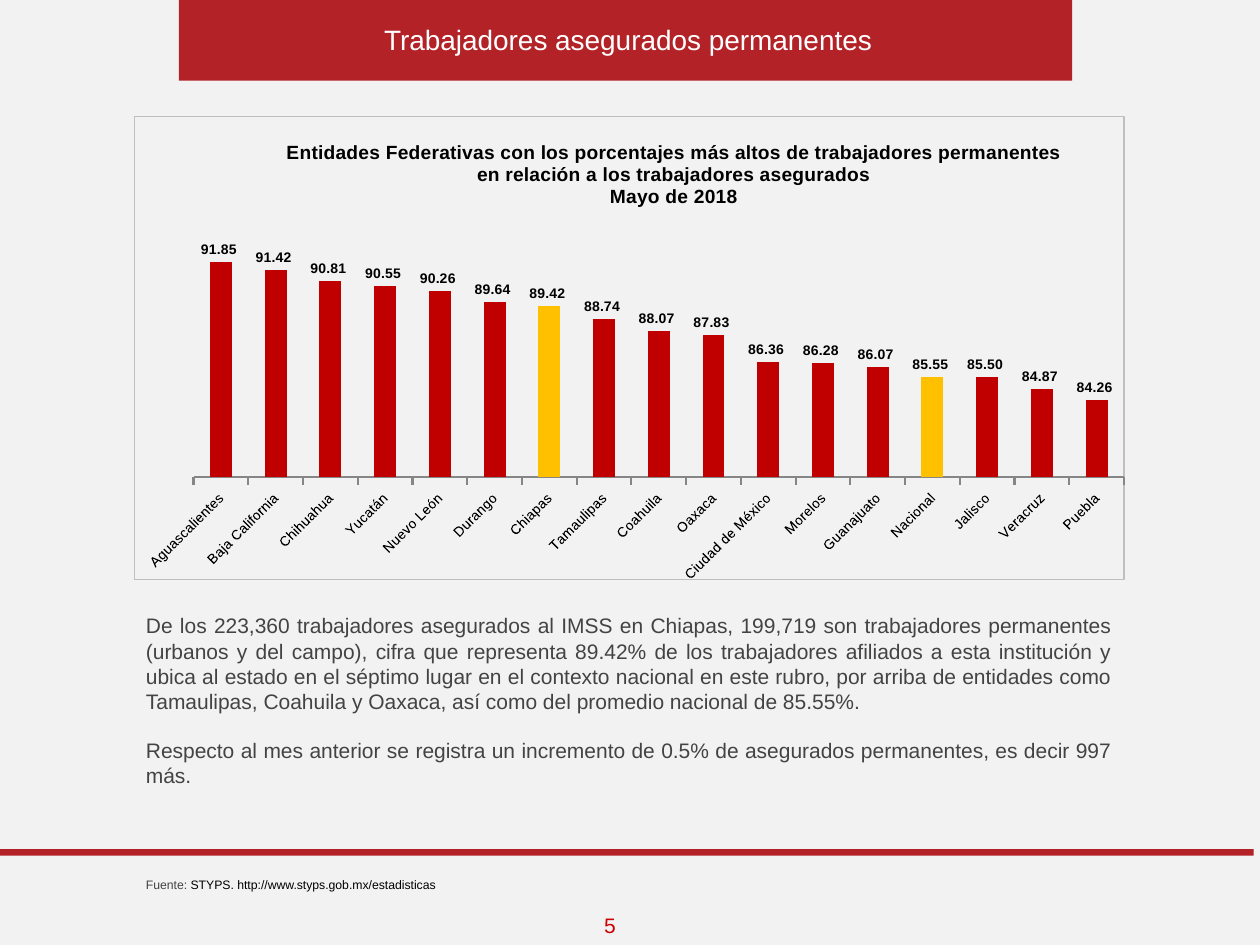
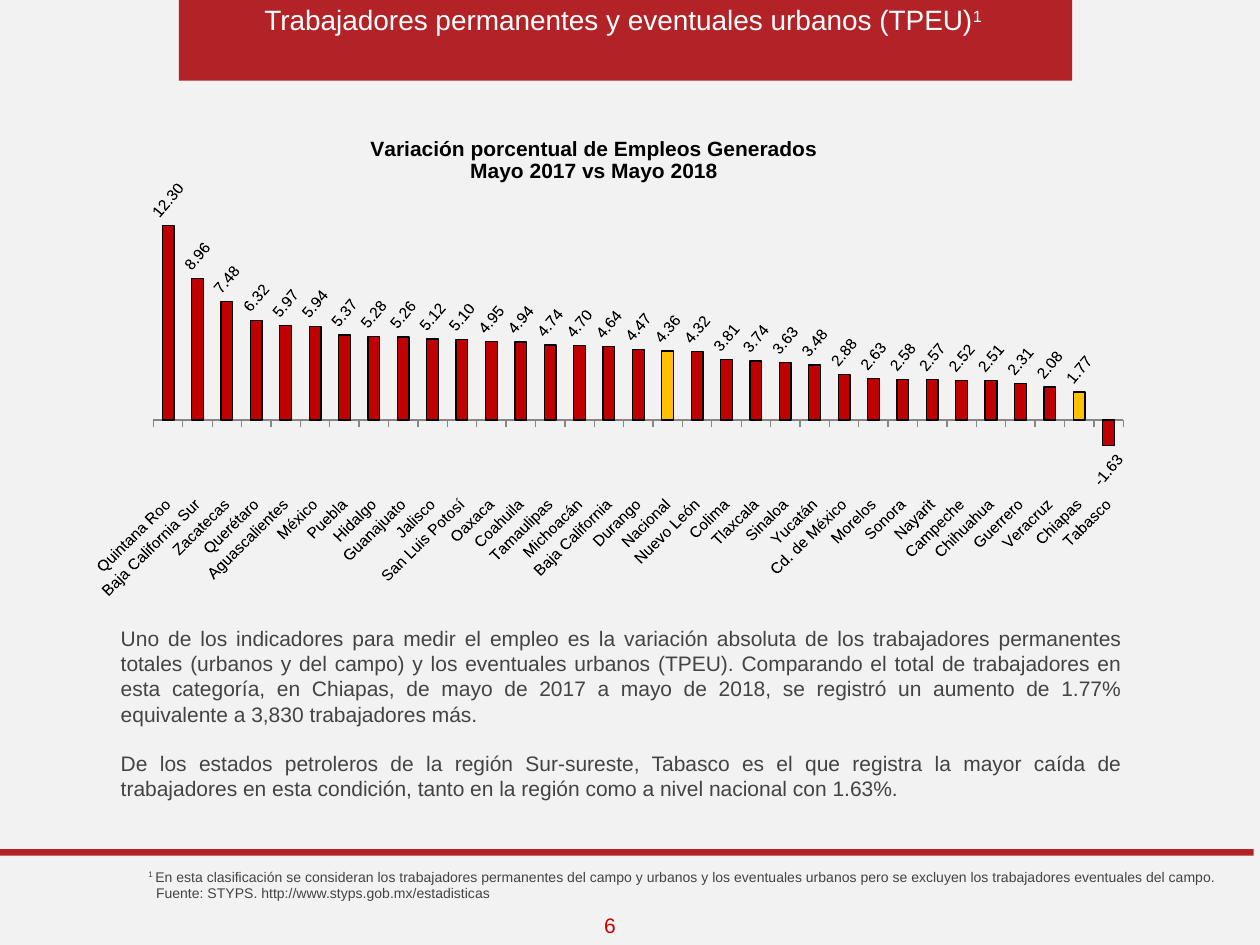
"""Build two slides on insured workers in Chiapas, each with a column chart and commentary."""
from dataclasses import dataclass

import lxml.etree
import pptx
import pptx.chart.data
import pptx.dml.color
import pptx.enum.chart
import pptx.enum.shapes
import pptx.enum.text
import pptx.oxml.ns
import pptx.util

SLIDE_WIDTH = pptx.util.Inches(10)
SLIDE_HEIGHT = pptx.util.Inches(7.5)
ALIGN = pptx.enum.text.PP_ALIGN
ANCHOR = pptx.enum.text.MSO_ANCHOR


@dataclass(frozen=True)
class Theme:
    """Colours and type sizes shared by the slides."""
    font: str = "Arial"
    background: str = "F2F2F2"
    band: str = "B22227"
    bar: str = "C00000"
    highlight: str = "FFC000"
    page: str = "CC0000"
    body: str = "434343"
    black: str = "000000"
    white: str = "FFFFFF"
    axis: str = "868686"
    frame: str = "BFBFBF"
    title_size: float = 16
    body_size: float = 12
    paragraph_gap: float = 13.8


THEME = Theme()


@dataclass(frozen=True)
class Box:
    """A rectangle in percent of the slide's width and height."""
    left: float
    top: float
    width: float
    height: float

    def emu(self) -> tuple[int, int, int, int]:
        """Return left, top, width and height in EMU."""
        return (int(SLIDE_WIDTH * self.left / 100), int(SLIDE_HEIGHT * self.top / 100),
                int(SLIDE_WIDTH * self.width / 100), int(SLIDE_HEIGHT * self.height / 100))


@dataclass(frozen=True)
class Span:
    """A stretch of text with its own colour or raised position."""
    text: str
    color: str | None = None
    raised: bool = False


@dataclass(frozen=True)
class ColumnChart:
    """The data and look of a column chart."""
    box: Box
    title: str
    title_size: float
    title_at: tuple[float, float]
    plot: tuple[float, float, float, float]
    scale: tuple[float, float]
    values: dict[str, float]
    number_format: str
    label_size: float
    label_bold: bool = False
    label_angle: int = 0
    axis_width: float = 0.75
    outline: str | None = None
    frame: str | None = None


@dataclass(frozen=True)
class Report:
    """The content of one slide."""
    page: str
    title: list[Span]
    title_box: Box
    body: list[str]
    body_box: Box
    footer: list[list[Span]]
    footer_box: Box
    footer_size: float
    chart: ColumnChart


BANDS = [Box(14.2, 0, 70.9, 8.53), Box(0, 89.87, 99.5, 0.67)]
PAGE_BOX = Box(47, 95.87, 2.8, 4.13)
HIGHLIGHTED = {"Chiapas", "Nacional"}

REPORTS = [
    Report(
        page="5",
        title=[Span("Trabajadores asegurados permanentes")],
        title_box=Box(14.6, 1.73, 70.5, 4.93),
        body=[
            "De los 223,360 trabajadores asegurados al IMSS en Chiapas, 199,719 son trabajadores "
            "permanentes (urbanos y del campo), cifra que representa 89.42% de los trabajadores "
            "afiliados a esta institución y ubica al estado en el séptimo lugar en el contexto "
            "nacional en este rubro, por arriba de entidades como Tamaulipas, Coahuila y Oaxaca, "
            "así como del promedio nacional de 85.55%.",
            "Respecto al mes anterior se registra un incremento de 0.5% de asegurados "
            "permanentes, es decir 997 más.",
        ],
        body_box=Box(10.6, 64.13, 78.7, 20),
        footer=[[Span("Fuente: "),
                 Span("STYPS. http://www.styps.gob.mx/estadisticas", THEME.black)]],
        footer_box=Box(10.6, 92.13, 25.5, 2.93),
        footer_size=7,
        chart=ColumnChart(
            box=Box(10.6, 12.27, 78.7, 49.33),
            title="Entidades Federativas con los porcentajes más altos de trabajadores permanentes\n"
                  "en relación a los trabajadores asegurados\nMayo de 2018",
            title_size=11,
            title_at=(0.15, 0.04),
            plot=(0.06, 0.23, 0.94, 0.55),
            scale=(80, 94),
            values={
                "Aguascalientes": 91.85, "Baja California": 91.42, "Chihuahua": 90.81,
                "Yucatán": 90.55, "Nuevo León": 90.26, "Durango": 89.64, "Chiapas": 89.42,
                "Tamaulipas": 88.74, "Coahuila": 88.07, "Oaxaca": 87.83,
                "Ciudad de México": 86.36, "Morelos": 86.28, "Guanajuato": 86.07,
                "Nacional": 85.55, "Jalisco": 85.5, "Veracruz": 84.87, "Puebla": 84.26,
            },
            number_format="#,##0.00_ ;\\-#,##0.00\\ ",
            label_size=8, label_bold=True, axis_width=1.25, frame=THEME.frame,
        ),
    ),
    Report(
        page="6",
        title=[Span("Trabajadores permanentes y eventuales urbanos (TPEU)"), Span("1", raised=True)],
        title_box=Box(14.2, -0.4, 70.5, 4.93),
        body=[
            "Uno de los indicadores para medir el empleo es la variación absoluta de los "
            "trabajadores permanentes totales (urbanos y del campo) y los eventuales urbanos "
            "(TPEU). Comparando el total de trabajadores en esta categoría, en Chiapas, de mayo "
            "de 2017 a mayo de 2018, se registró un aumento de 1.77% equivalente a 3,830 "
            "trabajadores más.",
            "De los estados petroleros de la región Sur-sureste, Tabasco es el que registra la "
            "mayor caída de trabajadores en esta condición, tanto en la región como a nivel "
            "nacional con 1.63%.",
        ],
        body_box=Box(8.6, 65.73, 81.5, 19.47),
        footer=[
            [Span("1 ", raised=True),
             Span("En esta clasificación se consideran los trabajadores permanentes del campo y "
                  "urbanos y los eventuales urbanos pero se excluyen los trabajadores eventuales "
                  "del campo.")],
            [Span("Fuente: STYPS. http://www.styps.gob.mx/estadisticas")],
        ],
        footer_box=Box(10.8, 91.2, 87.9, 6.13),
        footer_size=8,
        chart=ColumnChart(
            box=Box(7.1, 12.53, 84.6, 50.93),
            title="Variación porcentual de Empleos Generados\nMayo 2017 vs Mayo 2018",
            title_size=12,
            title_at=(0.26, 0.03),
            plot=(0.06, 0.17, 0.91, 0.6),
            scale=(-4, 14),
            values={
                "Quintana Roo": 12.3, "Baja California Sur": 8.96, "Zacatecas": 7.48,
                "Querétaro": 6.32, "Aguascalientes": 5.97, "México": 5.94, "Puebla": 5.37,
                "Hidalgo": 5.28, "Guanajuato": 5.26, "Jalisco": 5.12, "San Luis Potosí": 5.1,
                "Oaxaca": 4.95, "Coahuila": 4.94, "Tamaulipas": 4.74, "Michoacán": 4.7,
                "Baja California": 4.64, "Durango": 4.47, "Nacional": 4.36, "Nuevo León": 4.32,
                "Colima": 3.81, "Tlaxcala": 3.74, "Sinaloa": 3.63, "Yucatán": 3.48,
                "Cd. de México": 2.88, "Morelos": 2.63, "Sonora": 2.58, "Nayarit": 2.57,
                "Campeche": 2.52, "Chihuahua": 2.51, "Guerrero": 2.31, "Veracruz": 2.08,
                "Chiapas": 1.77, "Tabasco": -1.63,
            },
            number_format="#,##0.00",
            label_size=9, label_angle=-50, outline=THEME.black,
        ),
    ),
]


def rgb(color: str) -> pptx.dml.color.RGBColor:
    """Turn a hex string into a colour."""
    return pptx.dml.color.RGBColor.from_string(color)


def style(font, size: float, color: str, bold: bool = False) -> None:
    """Give a font the theme's typeface with a size, colour and weight."""
    font.name, font.size, font.bold = THEME.font, pptx.util.Pt(size), bold
    font.color.rgb = rgb(color)


def write(frame, paragraphs: list[list[Span]], size: float, color: str, align,
          anchor=ANCHOR.TOP, gap: float = 0) -> None:
    """Fill a text frame with paragraphs of spans."""
    frame.word_wrap = True
    frame.auto_size = pptx.enum.text.MSO_AUTO_SIZE.NONE
    frame.vertical_anchor = anchor
    for index, spans in enumerate(paragraphs):
        paragraph = frame.add_paragraph() if index else frame.paragraphs[0]
        paragraph.alignment = align
        if index and gap:
            paragraph.space_before = pptx.util.Pt(gap)
        style(paragraph.font, size, color)
        for span in spans:
            run = paragraph.add_run()
            run.text = span.text
            if span.color:
                run.font.color.rgb = rgb(span.color)
            if span.raised:
                run.font._element.set("baseline", "30000")


def add_band(slide, box: Box) -> None:
    """Draw a solid band."""
    band = slide.shapes.add_shape(pptx.enum.shapes.MSO_SHAPE.RECTANGLE, *box.emu())
    band.shadow.inherit = False
    band.fill.solid()
    band.fill.fore_color.rgb = rgb(THEME.band)
    band.line.fill.background()


def set_layout(parent, index: int, **shares: float) -> None:
    """Place a chart part by shares of the chart's size."""
    qn = pptx.oxml.ns.qn
    for old in parent.findall(qn("c:layout")):
        parent.remove(old)
    layout = lxml.etree.Element(qn("c:layout"))
    manual = lxml.etree.SubElement(layout, qn("c:manualLayout"))
    if "w" in shares:
        lxml.etree.SubElement(manual, qn("c:layoutTarget")).set("val", "inner")
    for side in ("x", "y"):
        lxml.etree.SubElement(manual, qn(f"c:{side}Mode")).set("val", "edge")
    for key, share in shares.items():
        lxml.etree.SubElement(manual, qn(f"c:{key}")).set("val", str(share))
    parent.insert(index, layout)


def set_frame(chart, color: str | None) -> None:
    """Clear the chart's background and outline it where a colour is given."""
    qn = pptx.oxml.ns.qn
    properties = lxml.etree.Element(qn("c:spPr"))
    lxml.etree.SubElement(properties, qn("a:noFill"))
    line = lxml.etree.SubElement(properties, qn("a:ln"), w="9525")
    if color:
        fill = lxml.etree.SubElement(line, qn("a:solidFill"))
        lxml.etree.SubElement(fill, qn("a:srgbClr"), val=color)
    else:
        lxml.etree.SubElement(line, qn("a:noFill"))
    chart._chartSpace.find(qn("c:chart")).addnext(properties)


def rotate(part, degrees: int) -> None:
    """Turn the text of an axis or of data labels."""
    part._element.get_or_add_txPr().find(pptx.oxml.ns.qn("a:bodyPr")).set("rot", str(degrees * 60000))


def add_columns(slide, content: ColumnChart) -> None:
    """Draw a column chart with value labels and highlighted columns."""
    kinds = pptx.enum.chart
    data = pptx.chart.data.CategoryChartData(number_format="0.00")
    data.categories = list(content.values)
    data.add_series("Porcentaje", list(content.values.values()))
    chart = slide.shapes.add_chart(kinds.XL_CHART_TYPE.COLUMN_CLUSTERED, *content.box.emu(), data).chart
    style(chart.font, 10, THEME.black)
    chart.has_legend = False
    set_frame(chart, content.frame)

    heading = chart.chart_title
    heading.text_frame.text = content.title
    for paragraph in heading.text_frame.paragraphs:
        style(paragraph.font, content.title_size, THEME.black, True)
    set_layout(heading._element, 1, **dict(zip("xy", content.title_at)))
    set_layout(chart._chartSpace.chart.plotArea, 0, **dict(zip("xywh", content.plot)))

    scale = chart.value_axis
    scale.minimum_scale, scale.maximum_scale = content.scale
    scale.has_major_gridlines = False
    scale.visible = False
    states = chart.category_axis
    states.tick_label_position = kinds.XL_TICK_LABEL_POSITION.LOW
    states.major_tick_mark = kinds.XL_TICK_MARK.OUTSIDE
    states.format.line.color.rgb = rgb(THEME.axis)
    states.format.line.width = pptx.util.Pt(content.axis_width)
    style(states.tick_labels.font, content.label_size, THEME.black)
    rotate(states, -45)

    plot = chart.plots[0]
    plot.gap_width, plot.vary_by_categories = 150, False
    series = plot.series[0]
    series.invert_if_negative = False
    columns = [(series, THEME.bar)] + [(series.points[index], THEME.highlight)
                                       for index, state in enumerate(content.values)
                                       if state in HIGHLIGHTED]
    for column, color in columns:
        column.format.fill.solid()
        column.format.fill.fore_color.rgb = rgb(color)
        if content.outline:
            column.format.line.color.rgb = rgb(content.outline)
            column.format.line.width = pptx.util.Pt(0.75)
    labels = series.data_labels
    labels.show_value = True
    labels.number_format, labels.number_format_is_linked = content.number_format, False
    labels.position = kinds.XL_LABEL_POSITION.OUTSIDE_END
    style(labels.font, content.label_size, THEME.black, content.label_bold)
    rotate(labels, content.label_angle)


def add_report(deck, report: Report) -> None:
    """Add one slide with its bands, title, chart, commentary and footer."""
    slide = deck.slides.add_slide(deck.slide_layouts[5])
    for box in BANDS:
        add_band(slide, box)
    title = slide.shapes.title
    slide.shapes._spTree.append(title._element)
    title.left, title.top, title.width, title.height = report.title_box.emu()
    write(title.text_frame, [report.title], THEME.title_size, THEME.white, ALIGN.CENTER)
    add_columns(slide, report.chart)

    body = slide.shapes.add_textbox(*report.body_box.emu()).text_frame
    write(body, [[Span(text)] for text in report.body], THEME.body_size, THEME.body,
          ALIGN.JUSTIFY, ANCHOR.MIDDLE, THEME.paragraph_gap)
    footer = slide.shapes.add_textbox(*report.footer_box.emu()).text_frame
    write(footer, report.footer, report.footer_size, THEME.body, ALIGN.JUSTIFY)
    for paragraph in footer.paragraphs[1:]:
        paragraph._p.get_or_add_pPr().set("marL", str(pptx.util.Inches(0.06)))
    page = slide.shapes.add_textbox(*PAGE_BOX.emu()).text_frame
    page.margin_left = page.margin_right = 0
    write(page, [[Span(report.page)]], THEME.body_size, THEME.page, ALIGN.CENTER, ANCHOR.MIDDLE)


def main() -> None:
    """Build and save the presentation."""
    deck = pptx.Presentation()
    deck.slide_width, deck.slide_height = SLIDE_WIDTH, SLIDE_HEIGHT
    backdrop = deck.slide_master.background.fill
    backdrop.solid()
    backdrop.fore_color.rgb = rgb(THEME.background)
    for report in REPORTS:
        add_report(deck, report)
    deck.save("out.pptx")


if __name__ == "__main__":
    main()
